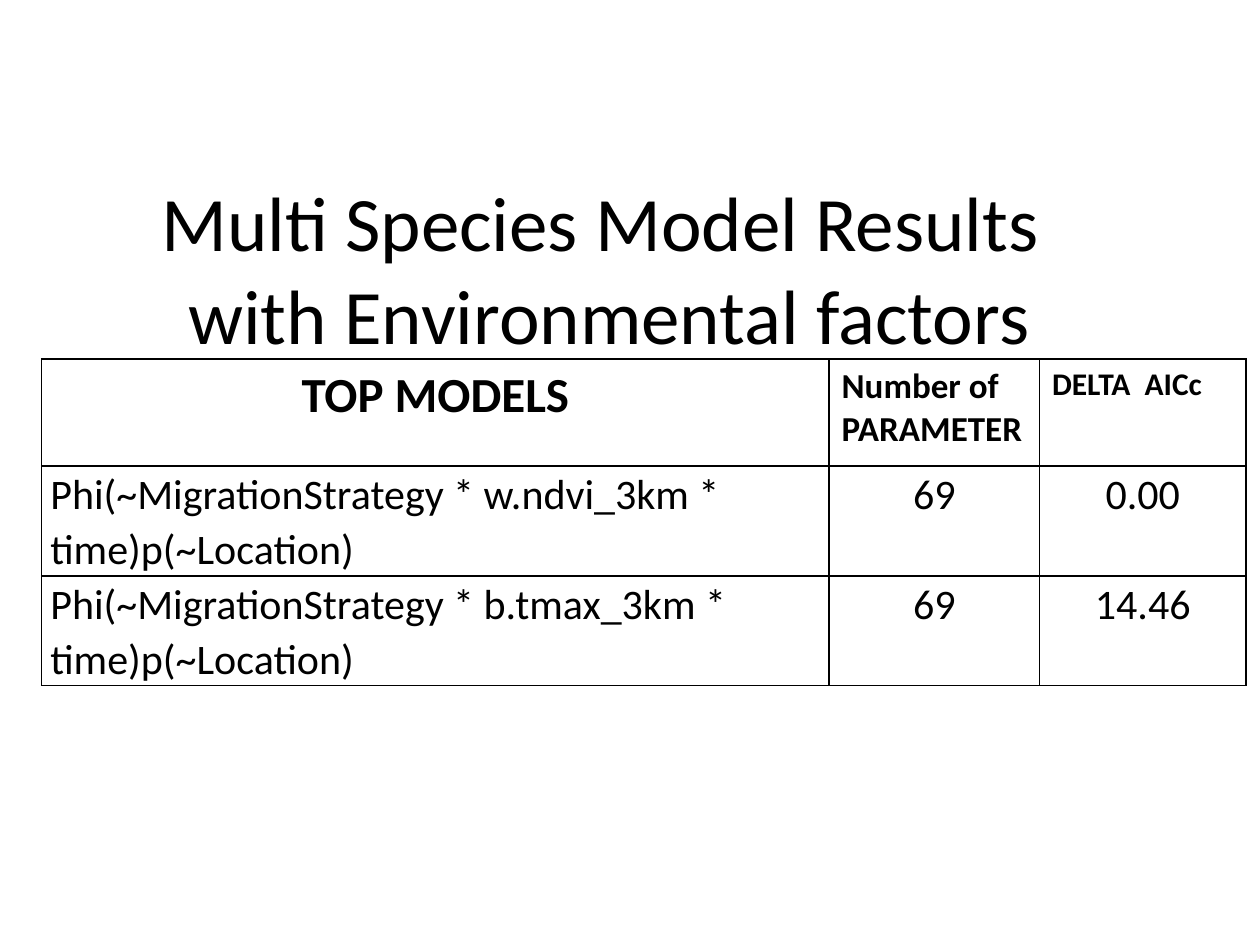
from dataclasses import dataclass

import lxml.etree
import pptx
import pptx.dml.color
import pptx.enum.text
import pptx.oxml.ns
import pptx.util

Inches = pptx.util.Inches
Pt = pptx.util.Pt
Align = pptx.enum.text.PP_ALIGN
Anchor = pptx.enum.text.MSO_ANCHOR


@dataclass(frozen=True)
class Theme:
    font: str = "Calibri"
    ink: str = "000000"
    title_size: int = 44
    body_size: int = 24
    border_width: int = 1


@dataclass(frozen=True)
class CellStyle:
    size: int
    bold: bool = False
    align: Align = Align.LEFT
    line_spacing: float = 1.0
    side_margin: float = 0.1
    end_margin: float = 0.05


@dataclass(frozen=True)
class ModelResult:
    formula: str
    parameters: str
    delta_aicc: str


THEME = Theme()
HEADERS = (
    (("TOP MODELS",), CellStyle(28, True, Align.CENTER)),
    (("Number of", "PARAMETER"), CellStyle(20, True)),
    (("DELTA  AICc",), CellStyle(18, True)),
)
RESULTS = tuple(
    ModelResult(f"Phi(~MigrationStrategy * {factor} * time)p(~Location)", "69", delta)
    for factor, delta in (("w.ndvi_3km", "0.00"), ("b.tmax_3km", "14.46"))
)
COLUMN_WIDTHS = (6.25, 1.67, 1.64)
ROW_HEIGHT = 0.85


def add_span(para, text: str, size: int, bold: bool = False) -> None:
    span = para.add_run()
    span.text = text
    span.font.name = THEME.font
    span.font.size = Pt(size)
    span.font.bold = bold
    span.font.color.rgb = pptx.dml.color.RGBColor.from_string(THEME.ink)


def add_title(page, lines: tuple[str, ...]) -> None:
    title = page.shapes.title
    title.left, title.top = Inches(0), Inches(1.33)
    title.width, title.height = Inches(9.67), Inches(1.58)
    title.text_frame.vertical_anchor = Anchor.MIDDLE
    para = title.text_frame.paragraphs[0]
    para.alignment = Align.CENTER
    for index, line in enumerate(lines):
        if index:
            para.add_line_break()
        add_span(para, line, THEME.title_size)


def add_borders(cell) -> None:
    """Draw all four sides; the border elements must come before the fill."""
    properties = cell._tc.get_or_add_tcPr()
    qn = pptx.oxml.ns.qn
    for index, side in enumerate(("lnL", "lnR", "lnT", "lnB")):
        line = lxml.etree.Element(qn(f"a:{side}"), w=str(Pt(THEME.border_width)))
        fill = lxml.etree.SubElement(line, qn("a:solidFill"))
        lxml.etree.SubElement(fill, qn("a:srgbClr"), val=THEME.ink)
        properties.insert(index, line)


def fill_cell(cell, lines: tuple[str, ...], style: CellStyle) -> None:
    cell.fill.background()
    cell.vertical_anchor = Anchor.TOP
    cell.margin_left = cell.margin_right = Inches(style.side_margin)
    cell.margin_top = cell.margin_bottom = Inches(style.end_margin)
    frame = cell.text_frame
    for index, line in enumerate(lines):
        para = frame.add_paragraph() if index else frame.paragraphs[0]
        para.alignment = style.align
        para.line_spacing = style.line_spacing
        add_span(para, line, style.size, style.bold)
    add_borders(cell)


def add_results_table(page) -> None:
    row_count = len(RESULTS) + 1
    table = page.shapes.add_table(
        row_count, len(HEADERS), Inches(0.33), Inches(2.85),
        Inches(sum(COLUMN_WIDTHS)), Inches(ROW_HEIGHT * row_count),
    ).table
    table.first_row = table.horz_banding = False
    for column, width in zip(table.columns, COLUMN_WIDTHS):
        column.width = Inches(width)
    for row in table.rows:
        row.height = Inches(ROW_HEIGHT)

    for column, (lines, style) in enumerate(HEADERS):
        fill_cell(table.cell(0, column), lines, style)
    for row, result in enumerate(RESULTS, start=1):
        values = (result.formula, result.parameters, result.delta_aicc)
        for column, value in enumerate(values):
            align = Align.CENTER if column else Align.LEFT
            style = CellStyle(THEME.body_size, False, align, 1.07, 0.07, 0)
            fill_cell(table.cell(row, column), (value,), style)


def main() -> None:
    deck = pptx.Presentation()
    deck.slide_width, deck.slide_height = Inches(10), Inches(7.5)
    page = deck.slides.add_slide(deck.slide_layouts.get_by_name("Title Only"))
    add_title(page, ("Multi Species Model Results ", "with Environmental factors"))
    add_results_table(page)
    deck.save("out.pptx")


if __name__ == "__main__":
    main()
